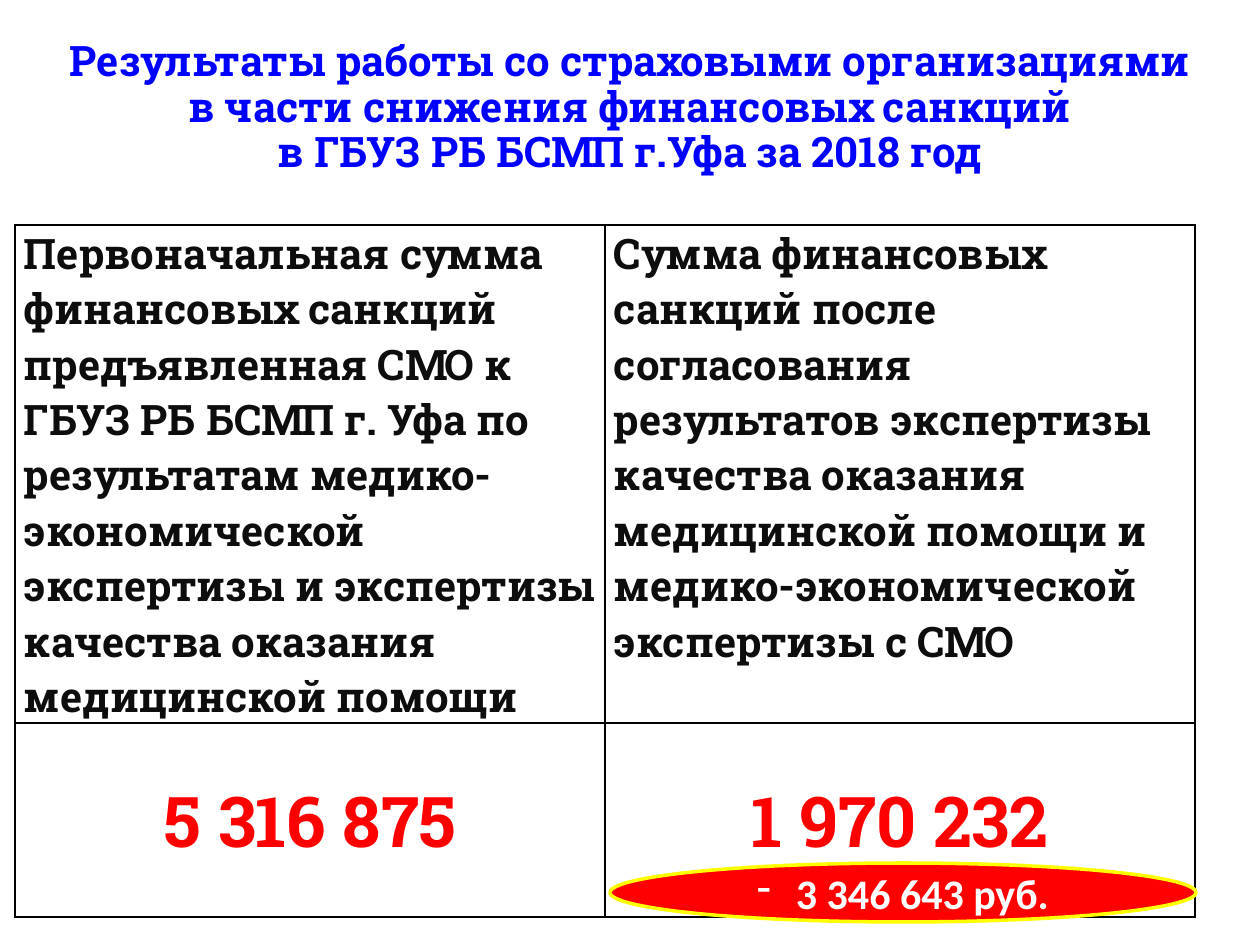
from dataclasses import dataclass

from lxml.etree import SubElement
from pptx import Presentation
from pptx.dml.color import RGBColor
from pptx.enum.shapes import MSO_SHAPE as Shape
from pptx.enum.text import MSO_ANCHOR as Anchor, MSO_AUTO_SIZE as AutoSize, PP_ALIGN as Align
from pptx.oxml.ns import qn
from pptx.util import Pt

PX = 914400 / 126
SERIF = "Roboto Slab"
SANS = "Calibri"
BLACK, WHITE, RED = "000000", "FFFFFF", "FF0000"
BLUE, YELLOW, INK = "0000FF", "FFFF00", "0D0D0D"


@dataclass(frozen=True)
class Style:
    size: int
    color: str
    font: str = SERIF
    align: Align = Align.LEFT
    anchor: Anchor = Anchor.TOP


@dataclass(frozen=True)
class Row:
    height: int
    style: Style
    texts: tuple[str, ...]


TITLE = Style(24, BLUE, align=Align.CENTER)
BADGE = Style(24, WHITE, SANS, Align.CENTER)
TITLE_LINES = (
    "Результаты работы со страховыми организациями",
    "в части снижения финансовых санкций",
    "в ГБУЗ РБ БСМП г.Уфа за 2018 год",
)
ROWS = (
    Row(498, Style(24, INK), (
        "Первоначальная сумма финансовых санкций предъявленная СМО к "
        "ГБУЗ РБ БСМП г. Уфа по результатам медико-экономической "
        "экспертизы и экспертизы качества оказания медицинской помощи",
        "Сумма финансовых санкций после согласования результатов "
        "экспертизы качества оказания медицинской помощи и "
        "медико-экономической экспертизы с СМО",
    )),
    Row(194, Style(40, RED, align=Align.CENTER, anchor=Anchor.MIDDLE),
        ("5 316 875", "1 970 232")),
)


def px(n: int) -> int:
    return round(n * PX)


def rgb(color: str) -> RGBColor:
    return RGBColor.from_string(color)


def add_text(p, text: str, style: Style) -> None:
    p.alignment = style.align
    r = p.add_run()
    r.text = text
    r.font.name = style.font
    r.font.size = Pt(style.size)
    r.font.bold = True
    r.font.color.rgb = rgb(style.color)


def add_borders(cell) -> None:
    """Draw 1 pt black lines on all four sides; must precede the cell fill."""
    tc_pr = cell._tc.get_or_add_tcPr()
    for side in ("lnL", "lnR", "lnT", "lnB"):
        ln = SubElement(tc_pr, qn(f"a:{side}"), w=str(Pt(1)))
        fill = SubElement(ln, qn("a:solidFill"))
        SubElement(fill, qn("a:srgbClr"), val=BLACK)


def add_dash_bullet(p, indent: int) -> None:
    p_pr = p._p.get_or_add_pPr()
    p_pr.set("marL", str(px(indent)))
    p_pr.set("indent", str(-px(indent)))
    SubElement(p_pr, qn("a:buFontTx"))
    SubElement(p_pr, qn("a:buChar"), char="-")


def format_title(title) -> None:
    title.left, title.top = px(15), px(26)
    title.width, title.height = px(1230), px(165)
    tf = title.text_frame
    tf.word_wrap = True
    tf.auto_size = AutoSize.SHAPE_TO_FIT_TEXT
    tf.vertical_anchor = Anchor.MIDDLE
    for i, line in enumerate(TITLE_LINES):
        p = tf.add_paragraph() if i else tf.paragraphs[0]
        p.line_spacing = 0.9
        p.space_before = Pt(0)
        add_text(p, line, TITLE)


def add_sanctions_table(s) -> None:
    n_cols = len(ROWS[0].texts)
    col_width = 590
    height = sum(row.height for row in ROWS)
    table = s.shapes.add_table(len(ROWS), n_cols, px(15), px(225),
                               px(col_width * n_cols), px(height)).table
    for col in table.columns:
        col.width = px(col_width)
    for i, row in enumerate(ROWS):
        table.rows[i].height = px(row.height)
        for j, text in enumerate(row.texts):
            cell = table.cell(i, j)
            add_borders(cell)
            cell.fill.solid()
            cell.fill.fore_color.rgb = rgb(WHITE)
            cell.margin_left = cell.margin_right = px(9)
            cell.margin_top = cell.margin_bottom = 0
            cell.vertical_anchor = row.style.anchor
            add_text(cell.text_frame.paragraphs[0], text, row.style)


def add_reduction_badge(s) -> None:
    sp = s.shapes.add_shape(Shape.OVAL, px(610), px(863), px(586), px(59))
    sp.shadow.inherit = False
    sp.fill.solid()
    sp.fill.fore_color.rgb = rgb(RED)
    sp.line.color.rgb = rgb(YELLOW)
    sp.line.width = Pt(2)
    tf = sp.text_frame
    tf.word_wrap = True
    tf.vertical_anchor = Anchor.MIDDLE
    p = tf.paragraphs[0]
    add_text(p, "3 346 643 руб.", BADGE)
    add_dash_bullet(p, 39)


def main() -> None:
    prs = Presentation()
    prs.slide_width, prs.slide_height = px(1260), px(945)
    s = prs.slides.add_slide(prs.slide_layouts[5])
    add_sanctions_table(s)
    format_title(s.shapes.title)
    add_reduction_badge(s)
    prs.save("out.pptx")


if __name__ == "__main__":
    main()
